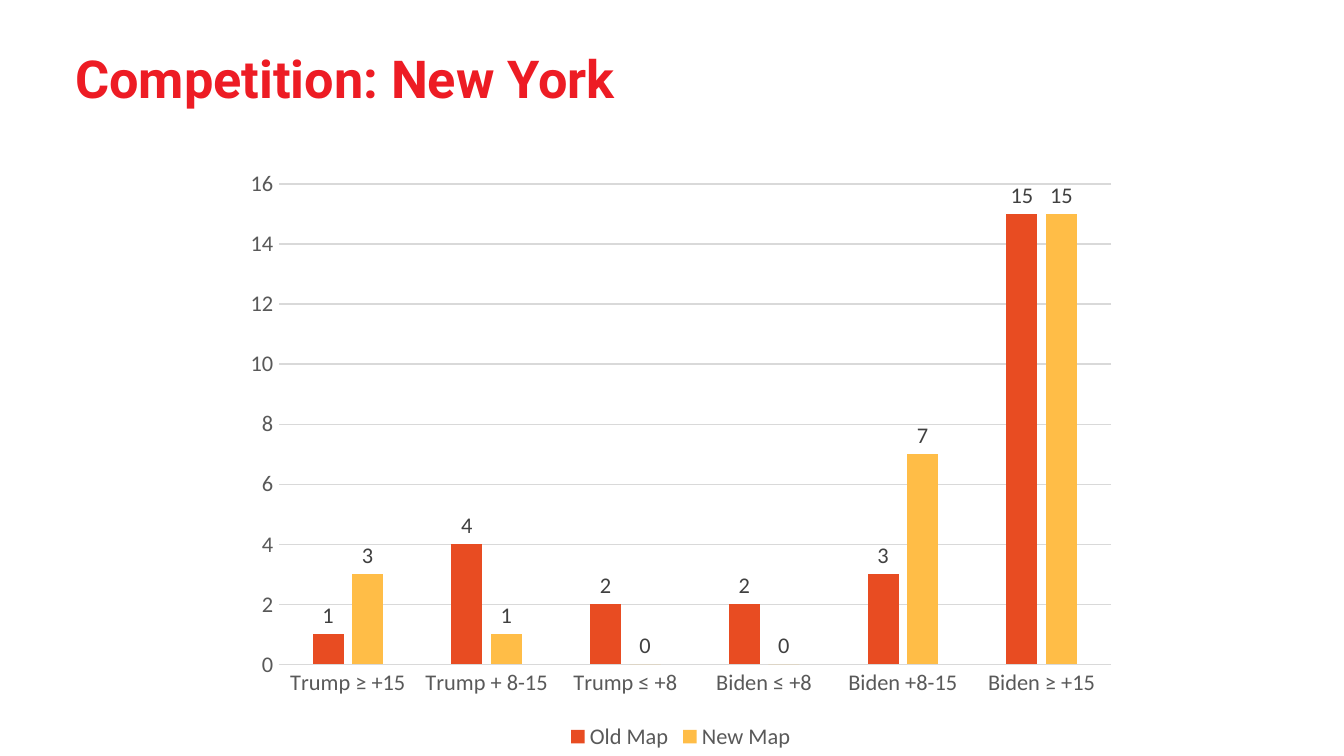
from dataclasses import dataclass

from pptx import Presentation
from pptx.chart.data import CategoryChartData
from pptx.dml.color import RGBColor
from pptx.enum.chart import XL_CHART_TYPE, XL_LABEL_POSITION, XL_LEGEND_POSITION, XL_TICK_MARK
from pptx.enum.text import MSO_ANCHOR, MSO_AUTO_SIZE, PP_ALIGN
from pptx.util import Pt


@dataclass(frozen=True)
class Theme:
    title_font: str = "Roboto"
    chart_font: str = "Calibri"
    title_color: str = "ED1C24"
    axis_color: str = "595959"
    label_color: str = "404040"
    grid_color: str = "D9D9D9"
    title_size: float = 28
    chart_size: float = 12
    line_width: float = 0.75


@dataclass(frozen=True)
class MapSeries:
    name: str
    seats: tuple[int, ...]
    color: str


@dataclass(frozen=True)
class Box:
    left: float
    top: float
    width: float
    height: float


THEME = Theme()
TITLE_BOX = Box(40.3, 31, 564.5, 33.1)
CHART_BOX = Box(124.6, 85, 480.2, 319.7)
CATEGORIES = (
    "Trump ≥ +15", "Trump + 8-15", "Trump ≤ +8",
    "Biden ≤ +8", "Biden +8-15", "Biden ≥ +15",
)
MAPS = (
    MapSeries("Old Map", (1, 4, 2, 2, 3, 15), "E84C22"),
    MapSeries("New Map", (3, 1, 0, 0, 7, 15), "FFBD47"),
)


def format_font(font, *, name: str, size: float, color: str, bold: bool = False) -> None:
    font.name = name
    font.size = Pt(size)
    font.bold = bold
    font.color.rgb = RGBColor.from_string(color)


def format_chart_font(font, color: str) -> None:
    format_font(font, name=THEME.chart_font, size=THEME.chart_size, color=color)


def format_line(line) -> None:
    line.color.rgb = RGBColor.from_string(THEME.grid_color)
    line.width = Pt(THEME.line_width)


def write_text(shape, text: str, *, line_spacing: float, **font_format) -> None:
    frame = shape.text_frame
    frame.margin_left = frame.margin_top = frame.margin_right = frame.margin_bottom = 0
    frame.word_wrap = True
    frame.auto_size = MSO_AUTO_SIZE.NONE
    frame.vertical_anchor = MSO_ANCHOR.TOP
    paragraph = frame.paragraphs[0]
    paragraph.alignment = PP_ALIGN.LEFT
    paragraph.line_spacing = line_spacing
    run = paragraph.add_run()
    run.text = text
    format_font(run.font, **font_format)


def place(shape, box: Box) -> None:
    shape.left, shape.top = Pt(box.left), Pt(box.top)
    shape.width, shape.height = Pt(box.width), Pt(box.height)


def format_axis(axis) -> None:
    axis.major_tick_mark = axis.minor_tick_mark = XL_TICK_MARK.NONE
    format_chart_font(axis.tick_labels.font, THEME.axis_color)


def format_series(series, color: str) -> None:
    series.format.fill.solid()
    series.format.fill.fore_color.rgb = RGBColor.from_string(color)
    series.invert_if_negative = False
    labels = series.data_labels
    labels.show_value = True
    labels.position = XL_LABEL_POSITION.OUTSIDE_END
    format_chart_font(labels.font, THEME.label_color)


def add_seat_chart(slide, box: Box) -> None:
    data = CategoryChartData(number_format="General")
    data.categories = CATEGORIES
    for district_map in MAPS:
        data.add_series(district_map.name, district_map.seats)
    chart = slide.shapes.add_chart(
        XL_CHART_TYPE.COLUMN_CLUSTERED,
        Pt(box.left), Pt(box.top), Pt(box.width), Pt(box.height), data,
    ).chart
    format_chart_font(chart.font, THEME.axis_color)
    chart.has_title = False
    chart.has_legend = True
    chart.legend.position = XL_LEGEND_POSITION.BOTTOM
    chart.legend.include_in_layout = False
    format_chart_font(chart.legend.font, THEME.axis_color)

    plot = chart.plots[0]
    plot.gap_width = 219
    plot.overlap = -27
    plot.vary_by_categories = False
    for series, district_map in zip(plot.series, MAPS):
        format_series(series, district_map.color)

    format_axis(chart.category_axis)
    format_line(chart.category_axis.format.line)
    value_axis = chart.value_axis
    format_axis(value_axis)
    value_axis.minimum_scale, value_axis.maximum_scale = 0, 16
    value_axis.major_unit = 2
    value_axis.format.line.fill.background()
    value_axis.has_major_gridlines = True
    format_line(value_axis.major_gridlines.format.line)


def main() -> None:
    presentation = Presentation()
    presentation.slide_width, presentation.slide_height = Pt(720), Pt(405)
    slide = presentation.slides.add_slide(presentation.slide_layouts[5])
    title = slide.shapes.title
    place(title, TITLE_BOX)
    write_text(
        title, "Competition: New York", line_spacing=0.8,
        name=THEME.title_font, size=THEME.title_size, color=THEME.title_color, bold=True,
    )
    add_seat_chart(slide, CHART_BOX)
    presentation.save("out.pptx")


if __name__ == "__main__":
    main()
